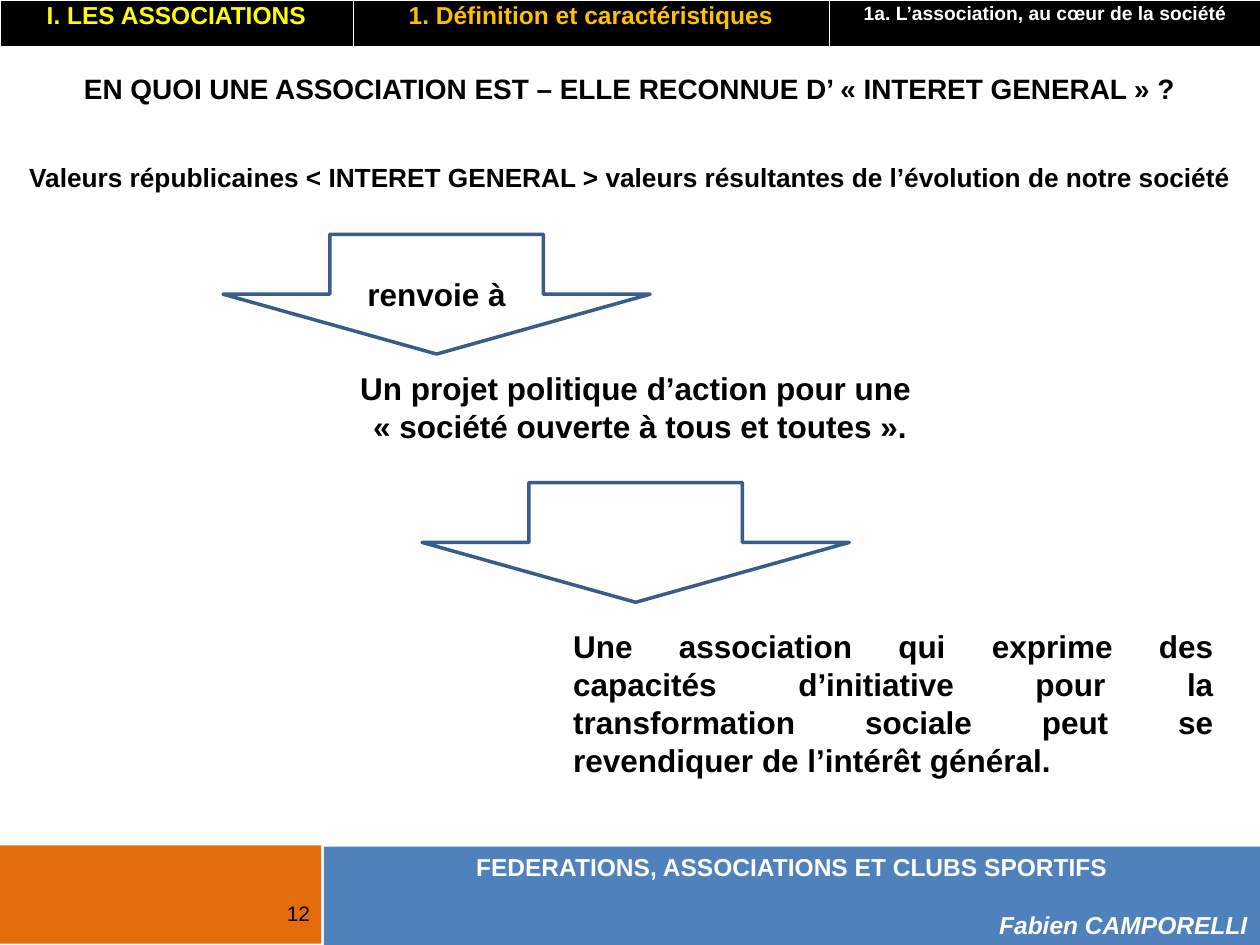
from dataclasses import dataclass

import pptx
import pptx.dml.color
import pptx.enum.shapes
import pptx.enum.text
import pptx.oxml
import pptx.oxml.ns
import pptx.util

Inches = pptx.util.Inches
Pt = pptx.util.Pt
Align = pptx.enum.text.PP_ALIGN
Anchor = pptx.enum.text.MSO_ANCHOR
Shape = pptx.enum.shapes.MSO_SHAPE


@dataclass(frozen=True)
class Theme:
    font: str = "Arial"
    black: str = "000000"
    white: str = "FFFFFF"
    yellow: str = "FFFF00"
    amber: str = "FFC000"
    orange: str = "E46C0A"
    blue: str = "4F81BD"
    outline: str = "385D8A"
    title: int = 16
    values: int = 15
    body: int = 18
    band: int = 14
    crumb: int = 11
    number: int = 12


THEME = Theme()


def rgb(value):
    return pptx.dml.color.RGBColor.from_string(value)


def write(frame, lines, size, color=THEME.black, align=Align.CENTER, bold=True):
    frame.word_wrap = True
    frame.text = "\n".join(lines)
    for para in frame.paragraphs:
        para.alignment = align
        for span in para.runs:
            span.font.name = THEME.font
            span.font.size = Pt(size)
            span.font.bold = bold
            span.font.color.rgb = rgb(color)


def add_text(page, box, lines, size, **style):
    label = page.shapes.add_textbox(*map(Inches, box))
    write(label.text_frame, lines, size, **style)


def add_block(page, kind, box, fill, line=None):
    block = page.shapes.add_shape(kind, *map(Inches, box))
    block.shadow.inherit = False
    block.fill.solid()
    block.fill.fore_color.rgb = rgb(fill)
    if line:
        block.line.color.rgb = rgb(line)
        block.line.width = Pt(2)
    else:
        block.line.fill.background()
    return block


def add_cell_borders(cell):
    """Put hairlines on all four sides, ahead of the cell's fill."""
    properties = cell._tc.get_or_add_tcPr()
    widths = {"lnL": 0.06, "lnR": 0.06, "lnT": 0.06, "lnB": 0.17}
    for index, (tag, width) in enumerate(widths.items()):
        border = pptx.oxml.parse_xml(
            f'<a:{tag} {pptx.oxml.ns.nsdecls("a")} w="{int(Pt(width))}">'
            f'<a:solidFill><a:srgbClr val="{THEME.white}"/></a:solidFill></a:{tag}>'
        )
        properties.insert(index, border)


def add_breadcrumb(page, box):
    crumbs = [
        ("I. LES ASSOCIATIONS", 2.8, THEME.band, THEME.yellow),
        ("1. Définition et caractéristiques", 3.78, THEME.band, THEME.amber),
        ("1a. L’association, au cœur de la société", 3.43, THEME.crumb, THEME.white),
    ]
    table = page.shapes.add_table(1, len(crumbs), *map(Inches, box)).table
    table.first_row = table.horz_banding = False
    for index, (text, width, size, color) in enumerate(crumbs):
        table.columns[index].width = Inches(width)
        cell = table.cell(0, index)
        cell.fill.solid()
        cell.fill.fore_color.rgb = rgb(THEME.black)
        add_cell_borders(cell)
        write(cell.text_frame, [text], size, color)
        cell.text_frame.paragraphs[0].line_spacing = 0.81


def add_footer(page, box):
    left, top, width, height = box
    split = 2.57
    add_block(page, Shape.RECTANGLE, (left - 0.01, top - 0.01, split - 0.01, height), THEME.orange)
    band = add_block(page, Shape.RECTANGLE, (left + split, top, width - split, height), THEME.blue)
    frame = band.text_frame
    frame.vertical_anchor = Anchor.MIDDLE
    lines = ["FEDERATIONS, ASSOCIATIONS ET CLUBS SPORTIFS", "Fabien CAMPORELLI"]
    write(frame, lines, THEME.band, THEME.white)
    author = frame.paragraphs[1]
    author.alignment = Align.RIGHT
    author.space_before = Pt(16)
    author.runs[0].font.italic = True
    add_text(page, (left + 2.01, top + 0.38, 0.55, 0.4), ["12"], THEME.number,
             align=Align.RIGHT, bold=False)


def add_arrow(page, box, text=""):
    arrow = add_block(page, Shape.DOWN_ARROW, box, THEME.white, THEME.outline)
    if text:
        frame = arrow.text_frame
        frame.vertical_anchor = Anchor.MIDDLE
        # The arrow's text area stops a quarter short of its tip
        frame.margin_top = Inches(0.05 + box[3] / 4)
        write(frame, [text], THEME.body)


def add_reasoning(page, box):
    """Question, values, then two arrows stepping down to the conclusion."""
    left, top, width, _ = box
    add_text(page, (left, top, width, 0.37),
             ["EN QUOI UNE ASSOCIATION EST – ELLE RECONNUE D’ « INTERET GENERAL » ?"],
             THEME.title)
    add_text(page, (left, top + 0.71, width, 0.35),
             ["Valeurs républicaines < INTERET GENERAL > "
              "valeurs résultantes de l’évolution de notre société"],
             THEME.values)
    add_arrow(page, (left + 1.77, top + 1.34, 3.39, 0.95), "renvoie à")
    add_text(page, (left + 2.09, top + 2.36, 5.98, 0.7),
             ["Un projet politique d’action pour une ",
              "« société ouverte à tous et toutes »."],
             THEME.body)
    add_arrow(page, (left + 3.35, top + 3.31, 3.39, 0.95))
    add_text(page, (left + 4.45, top + 4.41, 5.28, 1.3),
             ["Une association qui exprime des capacités d’initiative pour la "
              "transformation sociale peut se revendiquer de l’intérêt général."],
             THEME.body, align=Align.JUSTIFY)


def main():
    deck = pptx.Presentation()
    deck.slide_width, deck.slide_height = Inches(10), Inches(7.5)
    page = deck.slides.add_slide(deck.slide_layouts[6])
    add_footer(page, (0, 6.72, 10, 0.78))
    add_breadcrumb(page, (0, 0, 10, 0.37))
    add_reasoning(page, (0, 0.52, 10, 5.71))
    deck.save("out.pptx")


if __name__ == "__main__":
    main()
